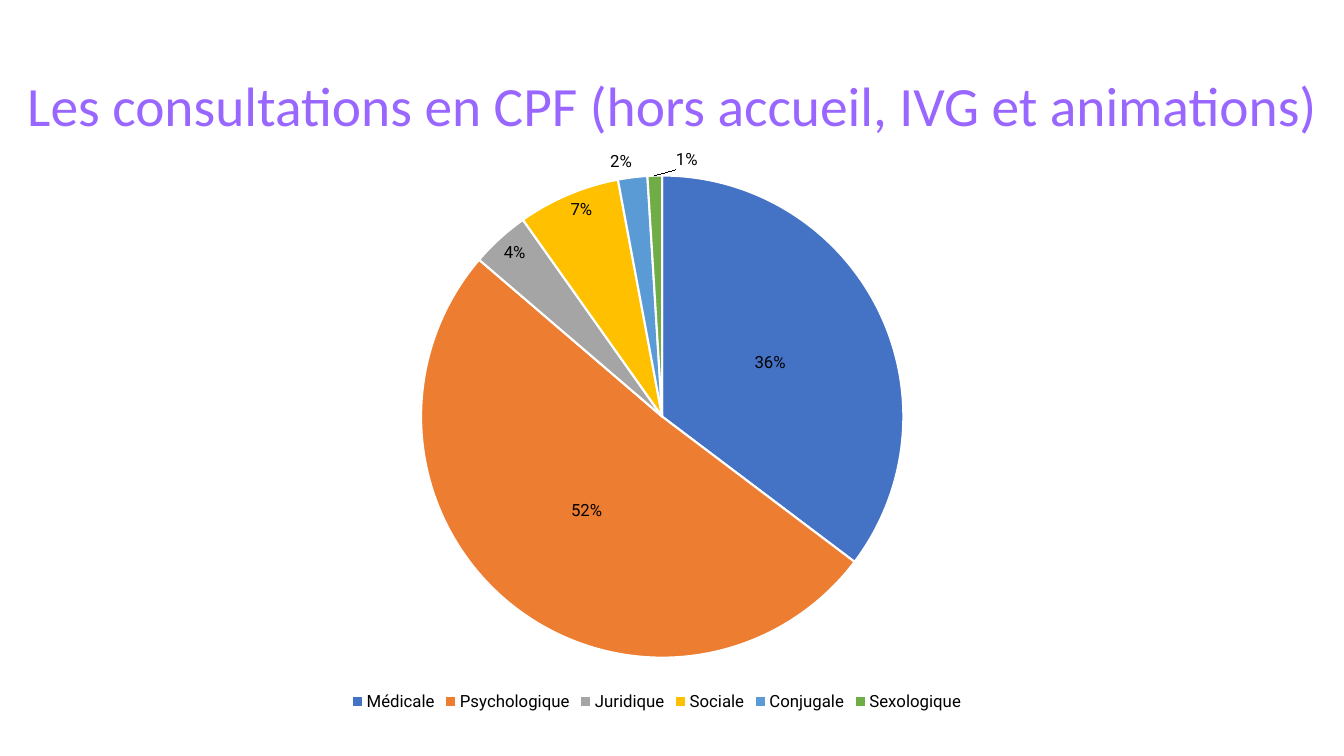
from dataclasses import dataclass
from typing import Optional

from pptx import Presentation
from pptx.chart.chart import Chart
from pptx.chart.data import CategoryChartData
from pptx.chart.series import PieSeries
from pptx.dml.color import RGBColor
from pptx.enum.chart import XL_CHART_TYPE, XL_LABEL_POSITION, XL_LEGEND_POSITION
from pptx.enum.text import MSO_ANCHOR, MSO_AUTO_SIZE, PP_ALIGN
from pptx.oxml import parse_xml
from pptx.oxml.ns import nsdecls
from pptx.slide import Slide
from pptx.util import Emu, Pt

EMU_PER_PX = 9144  # 100 px to the inch

WHITE = RGBColor(0xFF, 0xFF, 0xFF)
BLACK = RGBColor(0x00, 0x00, 0x00)
PURPLE = RGBColor(0x99, 0x66, 0xFF)
BLUE = RGBColor(0x44, 0x72, 0xC4)
ORANGE = RGBColor(0xED, 0x7D, 0x31)
GREY = RGBColor(0xA5, 0xA5, 0xA5)
GOLD = RGBColor(0xFF, 0xC0, 0x00)
SKY = RGBColor(0x5B, 0x9B, 0xD5)
GREEN = RGBColor(0x70, 0xAD, 0x47)

PERCENT_FORMAT = '0"%"'


@dataclass(frozen=True)
class Consultation:
    name: str
    percent: int
    color: RGBColor
    label_position: Optional[XL_LABEL_POSITION] = None
    label_shift: Optional[float] = None  # share of the chart width


CONSULTATIONS = [
    Consultation("Médicale", 36, BLUE),
    Consultation("Psychologique", 52, ORANGE),
    Consultation("Juridique", 4, GREY, XL_LABEL_POSITION.INSIDE_END),
    Consultation("Sociale", 7, GOLD, XL_LABEL_POSITION.INSIDE_END),
    Consultation("Conjugale", 2, SKY, XL_LABEL_POSITION.OUTSIDE_END),
    Consultation("Sexologique", 1, GREEN, XL_LABEL_POSITION.OUTSIDE_END, 0.03),
]


def px(length: int) -> Emu:
    return Emu(length * EMU_PER_PX)


def set_chart_font(font, size: int) -> None:
    font.name = "Roboto"
    font.size = Pt(size)
    font.color.rgb = BLACK


def add_title(slide: Slide, text: str) -> None:
    title = slide.shapes.title
    title.left, title.top, title.width, title.height = px(17), px(70), px(1300), px(75)
    frame = title.text_frame
    frame.text = text
    frame.word_wrap = True
    frame.auto_size = MSO_AUTO_SIZE.NONE
    frame.vertical_anchor = MSO_ANCHOR.MIDDLE
    paragraph = frame.paragraphs[0]
    paragraph.alignment = PP_ALIGN.LEFT
    paragraph.line_spacing = 0.9
    paragraph.font.name = "Calibri"
    paragraph.font.size = Pt(39.6)
    paragraph.font.color.rgb = PURPLE


def set_plot_layout(chart: Chart, x: float, y: float, width: float, height: float) -> None:
    plot_area = chart.plots[0]._element.getparent()
    for layout in plot_area.findall("{*}layout"):
        plot_area.remove(layout)
    plot_area.insert(0, parse_xml(
        f'<c:layout {nsdecls("c")}><c:manualLayout><c:layoutTarget val="inner"/>'
        f'<c:xMode val="edge"/><c:yMode val="edge"/><c:x val="{x}"/><c:y val="{y}"/>'
        f'<c:w val="{width}"/><c:h val="{height}"/></c:manualLayout></c:layout>'))


def format_slice(series: PieSeries, index: int, consultation: Consultation) -> None:
    point = series.points[index]
    point.format.fill.solid()
    point.format.fill.fore_color.rgb = consultation.color
    point.format.line.color.rgb = WHITE
    point.format.line.width = Pt(1.5)
    if consultation.label_position is None:
        return
    label = point.data_label
    set_chart_font(label.font, 12)
    label.position = consultation.label_position
    label_index = series.data_labels._element.xpath(f"c:dLbl/c:idx[@val='{index}']")[0]
    label_index.addnext(parse_xml(
        f"<c:numFmt {nsdecls('c')} formatCode='{PERCENT_FORMAT}' sourceLinked='0'/>"))
    if consultation.label_shift is not None:
        label_index.addnext(parse_xml(
            f'<c:layout {nsdecls("c")}><c:manualLayout>'
            f'<c:x val="{consultation.label_shift}"/><c:y val="0"/>'
            f'</c:manualLayout></c:layout>'))


def add_consultation_pie(slide: Slide, consultations: list[Consultation]) -> None:
    data = CategoryChartData(number_format=PERCENT_FORMAT)
    data.categories = [consultation.name for consultation in consultations]
    data.add_series("Series 1", [consultation.percent for consultation in consultations])
    chart = slide.shapes.add_chart(
        XL_CHART_TYPE.PIE, px(120), px(145), px(1063), px(565), data).chart
    chart.has_title = False
    set_chart_font(chart.font, 10)
    set_plot_layout(chart, 0.28, 0.04, 0.45, 0.87)

    # Legend
    chart.has_legend = True
    chart.legend.position = XL_LEGEND_POSITION.BOTTOM
    chart.legend.include_in_layout = False
    set_chart_font(chart.legend.font, 12)

    # Slices and labels
    plot = chart.plots[0]
    plot.vary_by_categories = True
    series = plot.series[0]
    labels = series.data_labels
    labels.show_value = True
    labels.number_format = PERCENT_FORMAT
    labels.number_format_is_linked = False
    labels.position = XL_LABEL_POSITION.CENTER
    set_chart_font(labels.font, 12)
    for index, consultation in enumerate(consultations):
        format_slice(series, index, consultation)


def main() -> None:
    presentation = Presentation()
    presentation.slide_width, presentation.slide_height = px(1333), px(750)
    slide = presentation.slides.add_slide(presentation.slide_layouts[5])
    slide.background.fill.solid()
    slide.background.fill.fore_color.rgb = WHITE
    add_title(slide, "Les consultations en CPF (hors accueil, IVG et animations)")
    add_consultation_pie(slide, CONSULTATIONS)
    presentation.save("out.pptx")


if __name__ == "__main__":
    main()
